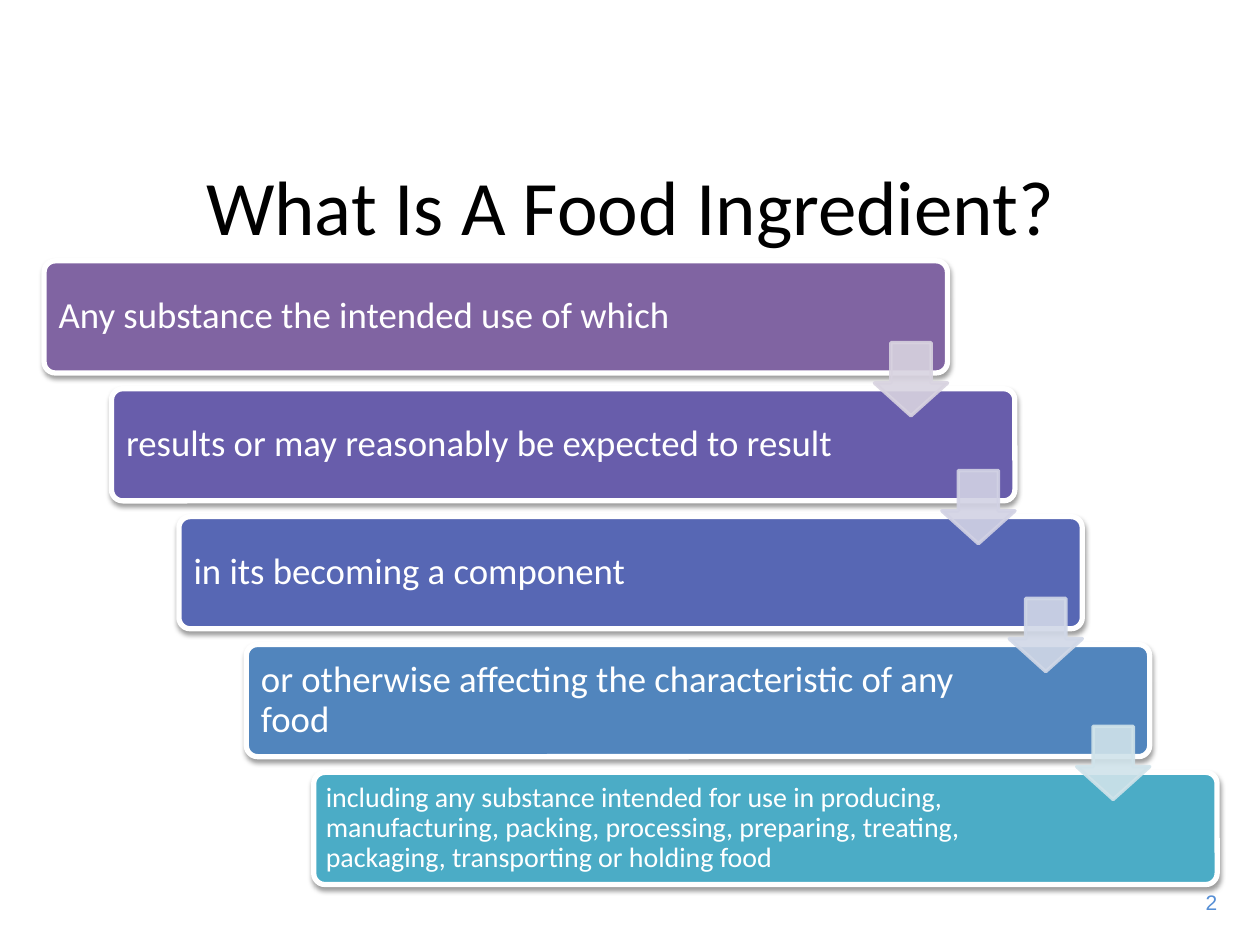
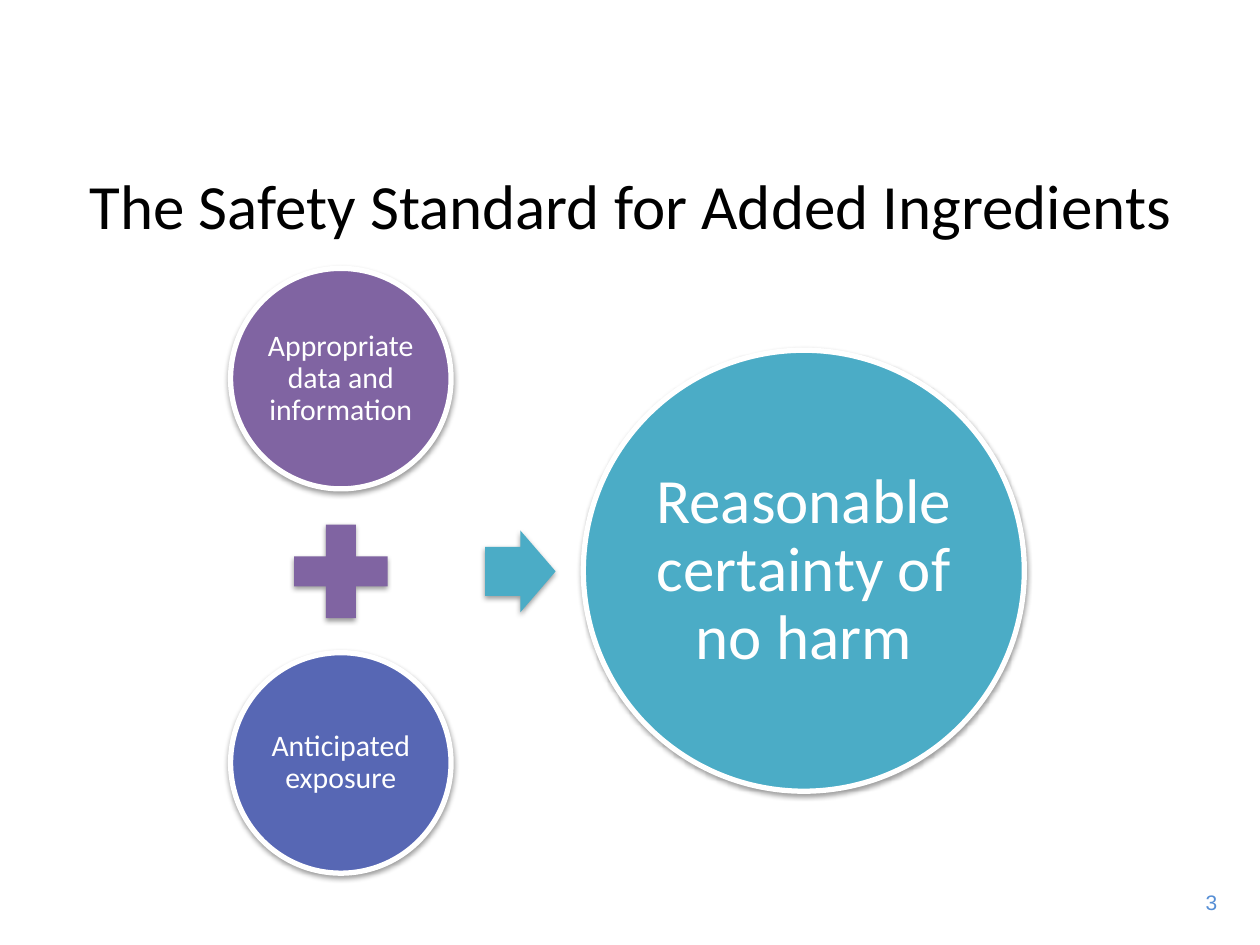
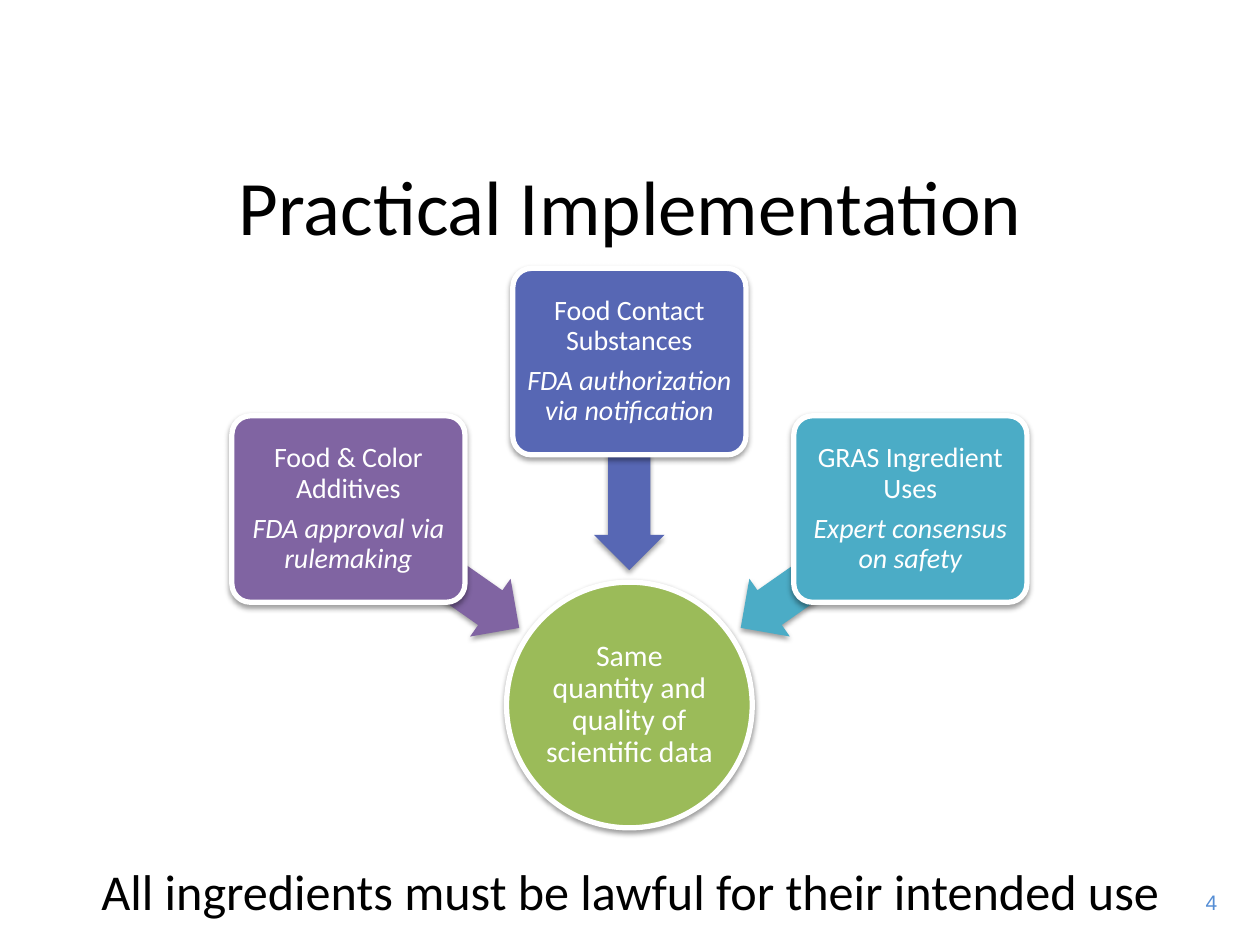
from dataclasses import dataclass

from lxml.etree import SubElement
from pptx import Presentation
from pptx.dml.color import RGBColor
from pptx.enum.shapes import MSO_SHAPE as Shape
from pptx.enum.text import MSO_ANCHOR as Anchor, PP_ALIGN as Align
from pptx.oxml.ns import qn
from pptx.util import Inches, Pt


@dataclass(frozen=True)
class Theme:
    purple: str = "8064A2"
    violet: str = "685DAB"
    indigo: str = "5767B4"
    blue: str = "5185BD"
    teal: str = "4BACC6"
    green: str = "9BBB59"
    white: str = "FFFFFF"
    black: str = "000000"
    number: str = "558ED5"
    font: str = "Calibri"
    number_font: str = "Arial"
    title_size: float = 44
    long_title_size: float = 36
    result_size: float = 36
    closing_size: float = 28.7
    step_size: float = 21
    circle_size: float = 17
    small_size: float = 16
    number_size: float = 12
    outline: float = 3


theme = Theme()


def add_figure(slide, kind, box, fill, outlined=True, adjustments=(), alpha=None):
    figure = slide.shapes.add_shape(kind, *map(Inches, box))
    for index, value in enumerate(adjustments):
        figure.adjustments[index] = value
    figure.fill.solid()
    figure.fill.fore_color.rgb = RGBColor.from_string(fill)
    if alpha:
        figure.line.color.rgb = RGBColor.from_string(fill)
        figure.line.width = Pt(2)
    elif outlined:
        figure.line.color.rgb = RGBColor.from_string(theme.white)
        figure.line.width = Pt(theme.outline)
    else:
        figure.line.fill.background()
    figure.shadow.inherit = False
    properties = figure.element.spPr
    if alpha:
        for color in properties.iter(qn("a:srgbClr")):
            SubElement(color, qn("a:alpha"), val=str(alpha * 1000))
    else:
        shadow = SubElement(properties.find(qn("a:effectLst")), qn("a:outerShdw"),
                            blurRad=str(Pt(3.1)), dist=str(Pt(1.6)),
                            dir="5400000", rotWithShape="0")
        shade = SubElement(shadow, qn("a:srgbClr"), val=theme.black)
        SubElement(shade, qn("a:alpha"), val="38000")
    return figure


def write(holder, lines, size, color=theme.white, align=Align.CENTER, font=theme.font,
          insets=(0.1, 0.05, 0.1, 0.05), compact=True):
    frame = holder.text_frame
    frame.word_wrap = True
    frame.vertical_anchor = Anchor.MIDDLE
    (frame.margin_left, frame.margin_top,
     frame.margin_right, frame.margin_bottom) = map(Inches, insets)
    for index, line in enumerate(lines):
        paragraph = frame.add_paragraph() if index else frame.paragraphs[0]
        paragraph.alignment = align
        if compact:
            paragraph.line_spacing = 0.9
            paragraph.space_after = Pt(round(size * 0.35, 1))
        run = paragraph.add_run()
        run.text = line
        run.font.name = font
        run.font.size = Pt(size)
        run.font.italic = index > 0
        run.font.color.rgb = RGBColor.from_string(color)


deck = Presentation()
deck.slide_width, deck.slide_height = Inches(10), Inches(7.5)

titles = [
    ("What Is A Food Ingredient?", theme.title_size),
    ("The Safety Standard for Added Ingredients", theme.long_title_size),
    ("Practical Implementation", theme.title_size),
]
for number, (title, size) in enumerate(titles, 2):
    slide = deck.slides.add_slide(deck.slide_layouts[6])
    page_number = slide.shapes.add_textbox(*map(Inches, (9.35, 7.01, 0.41, 0.3)))
    write(page_number, [str(number)], theme.number_size, theme.number, Align.RIGHT,
          theme.number_font, compact=False)
    heading = slide.shapes.add_textbox(*map(Inches, (0.35, 1.12, 9.31, 1.01)))
    write(heading, [title], size, theme.black, compact=False)
definition, standard, practice = deck.slides

steps = [
    ("Any substance the intended use of which", theme.purple, theme.step_size, 0.09),
    ("results or may reasonably be expected to result", theme.violet, theme.step_size, 0.09),
    ("in its becoming a component", theme.indigo, theme.step_size, 0.09),
    ("or otherwise affecting the characteristic of any food", theme.blue,
     theme.step_size, 0.09),
    ("including any substance intended for use in producing, manufacturing, packing, "
     "processing, preparing, treating, packaging, transporting or holding food",
     theme.teal, theme.small_size, 0.07),
]
step_right, step_down = 2.14 / 4, 4.06 / 4
for index, (clause, color, size, inset) in enumerate(steps):
    step = add_figure(definition, Shape.ROUNDED_RECTANGLE,
                      (0.35 + index * step_right, 2.07 + index * step_down, 7.17, 0.89),
                      color, adjustments=[0.1])
    write(step, [clause], size, align=Align.LEFT, insets=(inset, inset, 1.11 + inset, inset))
for index, tint in enumerate(["D8D3E0", "D2D2E4", "D1D8E7", "D0E3EA"]):
    add_figure(definition, Shape.DOWN_ARROW,
               (6.94 + index * step_right, 2.72 + index * step_down, 0.58, 0.58),
               tint, adjustments=[0.55, 0.45], alpha=90)

factors = [
    ("Appropriate data and information", 2.13, theme.purple),
    ("Anticipated exposure", 5.18, theme.indigo),
]
for factor, top, color in factors:
    circle = add_figure(standard, Shape.OVAL, (1.83, top, 1.75, 1.75), color)
    write(circle, [factor], theme.circle_size, insets=[0.02] * 4)
add_figure(standard, Shape.MATH_PLUS, (2.2, 4.03, 1.01, 1.01), theme.purple, outlined=False)
add_figure(standard, Shape.RIGHT_ARROW, (3.85, 4.21, 0.56, 0.65), theme.teal,
           outlined=False, adjustments=[0.6, 0.5])
result = add_figure(standard, Shape.OVAL, (4.63, 2.78, 3.5, 3.5), theme.teal)
write(result, ["Reasonable certainty of no harm"], theme.result_size, insets=[0.05] * 4)

closing = practice.shapes.add_textbox(*map(Inches, (0.35, 6.77, 9.31, 0.6)))
write(closing, ["All ingredients must be lawful for their intended use"],
      theme.closing_size, theme.black, compact=False)
evidence = add_figure(practice, Shape.OVAL, (4.02, 4.62, 1.95, 1.95), theme.green)
write(evidence, ["Same quantity and quality of scientific data"], theme.circle_size,
      insets=[0.01] * 4)

routes = [
    ("Food & Color Additives", "FDA approval via rulemaking", theme.purple,
     (1.84, 3.3), (2.62, 4.23), 215),
    ("Food Contact Substances", "FDA authorization via notification", theme.indigo,
     (4.07, 2.13), (4.17, 3.42), 270),
    ("GRAS Ingredient Uses", "Expert consensus on safety", theme.teal,
     (6.3, 3.3), (5.73, 4.23), 325),
]
for category, process, color, card_corner, arrow_corner, angle in routes:
    arrow = add_figure(practice, Shape.LEFT_ARROW, (*arrow_corner, 1.65, 0.56), color,
                       outlined=False, adjustments=[0.6, 0.5])
    arrow.rotation = angle
    card = add_figure(practice, Shape.ROUNDED_RECTANGLE, (*card_corner, 1.85, 1.48), color,
                      adjustments=[0.1])
    write(card, [category, process], theme.small_size, insets=[0.03] * 4)

deck.save("out.pptx")
